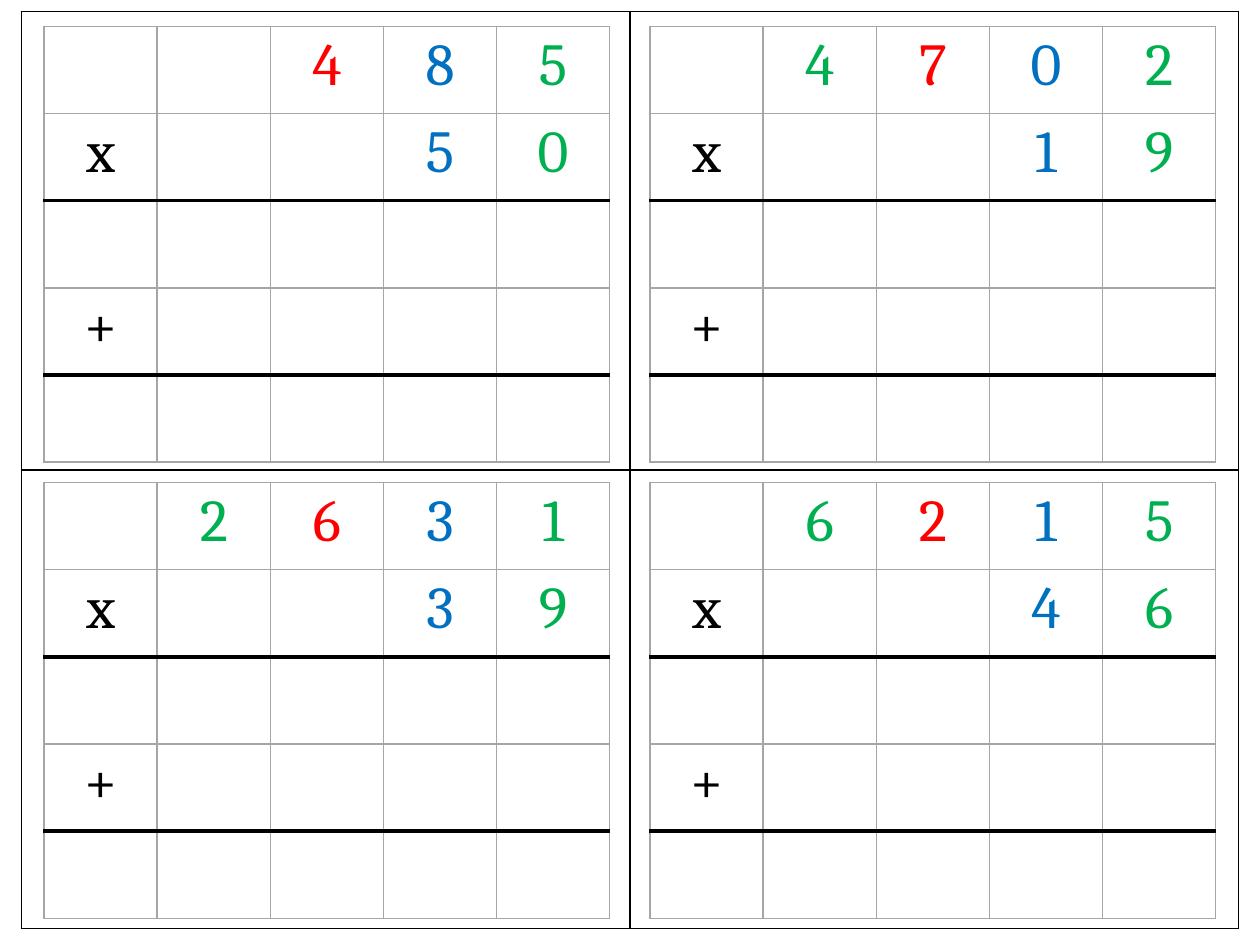
from itertools import product

from lxml.etree import SubElement
from pptx import Presentation
from pptx.dml.color import RGBColor
from pptx.enum.text import PP_ALIGN
from pptx.oxml.ns import qn
from pptx.util import Inches, Pt

BLACK = RGBColor(0x00, 0x00, 0x00)
WHITE = RGBColor(0xFF, 0xFF, 0xFF)
GREY = RGBColor(0xA6, 0xA6, 0xA6)
RED = RGBColor(0xFF, 0x00, 0x00)
BLUE = RGBColor(0x00, 0x70, 0xC0)
GREEN = RGBColor(0x00, 0xB0, 0x50)

# Sign column, then thousands, hundreds, tens and units
PLACE_COLOURS = [BLACK, GREEN, RED, BLUE, GREEN]
GRID_SIZE = len(PLACE_COLOURS)
THIN = (GREY, 1)
FRAME = (BLACK, 1)
RULE = (BLACK, 2.25)

SUM_LEFTS, SUM_TOPS = (0.35, 5.16), (0.21, 3.83)
SUMS = [("485", "50"), ("4702", "19"), ("2631", "39"), ("6215", "46")]


def set_borders(cell, left, right, top, bottom):
    """Draw the four sides, each given as (colour, points)."""
    properties = cell._tc.get_or_add_tcPr()
    sides = {"a:lnL": left, "a:lnR": right, "a:lnT": top, "a:lnB": bottom}
    for tag, (colour, points) in sides.items():
        line = SubElement(properties, qn(tag), w=str(Pt(points)))
        fill = SubElement(line, qn("a:solidFill"))
        SubElement(fill, qn("a:srgbClr"), val=str(colour))


def fill_white(cell):
    cell.fill.solid()
    cell.fill.fore_color.rgb = WHITE


def add_grid(slide, left, top, width, height, count):
    """Add a plain table of count by count equal cells."""
    table = slide.shapes.add_table(
        count, count, Inches(left), Inches(top), Inches(width), Inches(height)
    ).table
    table.first_row = table.horz_banding = False
    for column in table.columns:
        column.width = Inches(width / count)
    for row in table.rows:
        row.height = Inches(height / count)
    return table


def add_page_frame(slide, left, top, width, height):
    frame = add_grid(slide, left, top, width, height, 2)
    for cell in frame.iter_cells():
        set_borders(cell, FRAME, FRAME, FRAME, FRAME)
        fill_white(cell)


def write_digit(cell, digit, colour):
    cell.text_frame.text = digit
    paragraph = cell.text_frame.paragraphs[0]
    paragraph.alignment = PP_ALIGN.CENTER
    font = paragraph.runs[0].font
    font.name = "Cambria"
    font.size = Pt(34)
    font.color.rgb = colour


def add_multiplication(slide, left, top, width, height, number, multiplier):
    """Lay out a column multiplication with empty rows for the working."""
    grid = add_grid(slide, left, top, width, height, GRID_SIZE)
    rows = [
        number.rjust(GRID_SIZE),
        "x" + multiplier.rjust(GRID_SIZE - 1),
        "",
        "+",
        "",
    ]
    edges = [THIN, THIN, RULE, THIN, RULE, THIN]
    for r, c in product(range(GRID_SIZE), repeat=2):
        cell = grid.cell(r, c)
        cell.margin_top = cell.margin_bottom = Inches(0.04)
        set_borders(cell, THIN, THIN, edges[r], edges[r + 1])
        fill_white(cell)
        symbol = rows[r][c:c + 1].strip()
        if symbol:
            write_digit(cell, symbol, PLACE_COLOURS[c])


def main():
    presentation = Presentation()
    presentation.slide_width = Inches(10)
    presentation.slide_height = Inches(7.5)
    slide = presentation.slides.add_slide(presentation.slide_layouts[6])

    add_page_frame(slide, 0.17, 0.09, 9.66, 7.28)
    for (top, left), (number, multiplier) in zip(product(SUM_TOPS, SUM_LEFTS), SUMS):
        add_multiplication(slide, left, top, 4.49, 3.46, number, multiplier)

    presentation.save("out.pptx")


if __name__ == "__main__":
    main()
